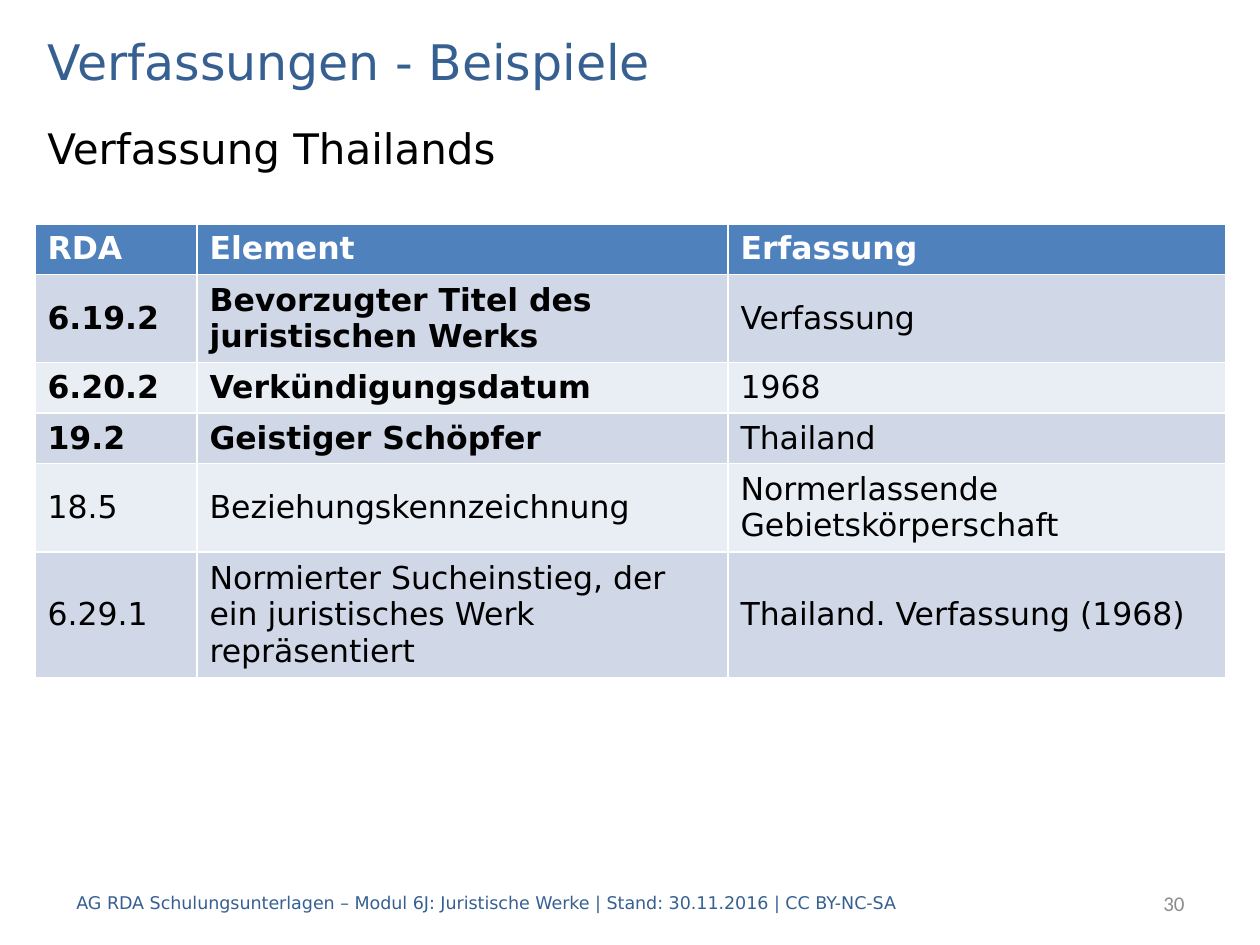
"""Build the slide on the constitution of Thailand with its RDA table."""
from dataclasses import dataclass

from pptx import Presentation
from pptx.dml.color import RGBColor as Rgb
from pptx.enum.text import MSO_ANCHOR as Anchor, PP_ALIGN as Align
from pptx.util import Emu, Pt


@dataclass(frozen=True)
class Theme:
    font: str = "DejaVu Sans"
    plain: str = "Calibri"
    blue: str = "376092"
    black: str = "000000"
    white: str = "FFFFFF"
    gray: str = "8C8C8C"
    head: str = "4F81BD"
    bands: tuple = ("D0D8E8", "E9EDF4")
    title: int = 28
    lead: int = 24
    cell: int = 18
    page: int = 12
    foot: int = 10


def px(n):
    return Emu(round(n * 914400 / 126))


def write(frame, text, size, color, font=Theme.font, bold=False, align=Align.LEFT):
    frame.word_wrap = True
    para = frame.paragraphs[0]
    para.alignment = align
    run = para.add_run()
    run.text = text
    run.font.name = font
    run.font.size = Pt(size)
    run.font.bold = bold
    run.font.color.rgb = Rgb.from_string(color)
    return para


theme = Theme()
deck = Presentation()
deck.slide_width, deck.slide_height = px(1260), px(945)
slide = deck.slides.add_slide(deck.slide_layouts[5])
shapes = slide.shapes

title = shapes.title
title.left, title.top, title.width, title.height = px(35), px(25), px(1191), px(71)
title.text_frame.vertical_anchor = Anchor.MIDDLE
write(title.text_frame, "Verfassungen - Beispiele", theme.title, theme.blue)

lead = shapes.add_textbox(px(35), px(116), px(1191), px(753))
para = write(lead.text_frame, "Verfassung Thailands", theme.lead, theme.black)
para.space_before = Pt(2)

rows = [
    ("RDA", "Element", "Erfassung"),
    ("6.19.2", "Bevorzugter Titel des juristischen Werks", "Verfassung"),
    ("6.20.2", "Verkündigungsdatum", "1968"),
    ("19.2", "Geistiger Schöpfer", "Thailand"),
    ("18.5", "Beziehungskennzeichnung", "Normerlassende Gebietskörperschaft"),
    ("6.29.1", "Normierter Sucheinstieg, der ein juristisches Werk repräsentiert",
     "Thailand. Verfassung (1968)"),
]
widths = (162, 531, 498)
heights = (48, 85, 49, 49, 85, 122)
core = range(1, 4)

table = shapes.add_table(len(rows), len(widths), px(35), px(224),
                         px(sum(widths)), px(sum(heights))).table
for col, width in zip(table.columns, widths):
    col.width = px(width)
for r, (row, height) in enumerate(zip(rows, heights)):
    table.rows[r].height = px(height)
    for c, text in enumerate(row):
        cell = table.cell(r, c)
        fill = theme.bands[(r - 1) % 2] if r else theme.head
        cell.fill.solid()
        cell.fill.fore_color.rgb = Rgb.from_string(fill)
        color = theme.black if r else theme.white
        bold = r == 0 or (r in core and c < 2)
        para = write(cell.text_frame, text, theme.cell, color, bold=bold)
        if r:
            cell.vertical_anchor = Anchor.MIDDLE
            para.space_before = para.space_after = Pt(6)

footer = (
    (997, 200, "30", theme.page, theme.gray, theme.plain, Align.RIGHT),
    (64, 893, "AG RDA Schulungsunterlagen – Modul 6J: Juristische Werke | "
     "Stand: 30.11.2016 | CC BY-NC-SA", theme.foot, theme.blue, theme.font, Align.LEFT),
)
for left, width, text, size, color, font, align in footer:
    box = shapes.add_textbox(px(left), px(878), px(width), px(50))
    box.text_frame.vertical_anchor = Anchor.MIDDLE
    write(box.text_frame, text, size, color, font, align=align)

deck.save("out.pptx")
